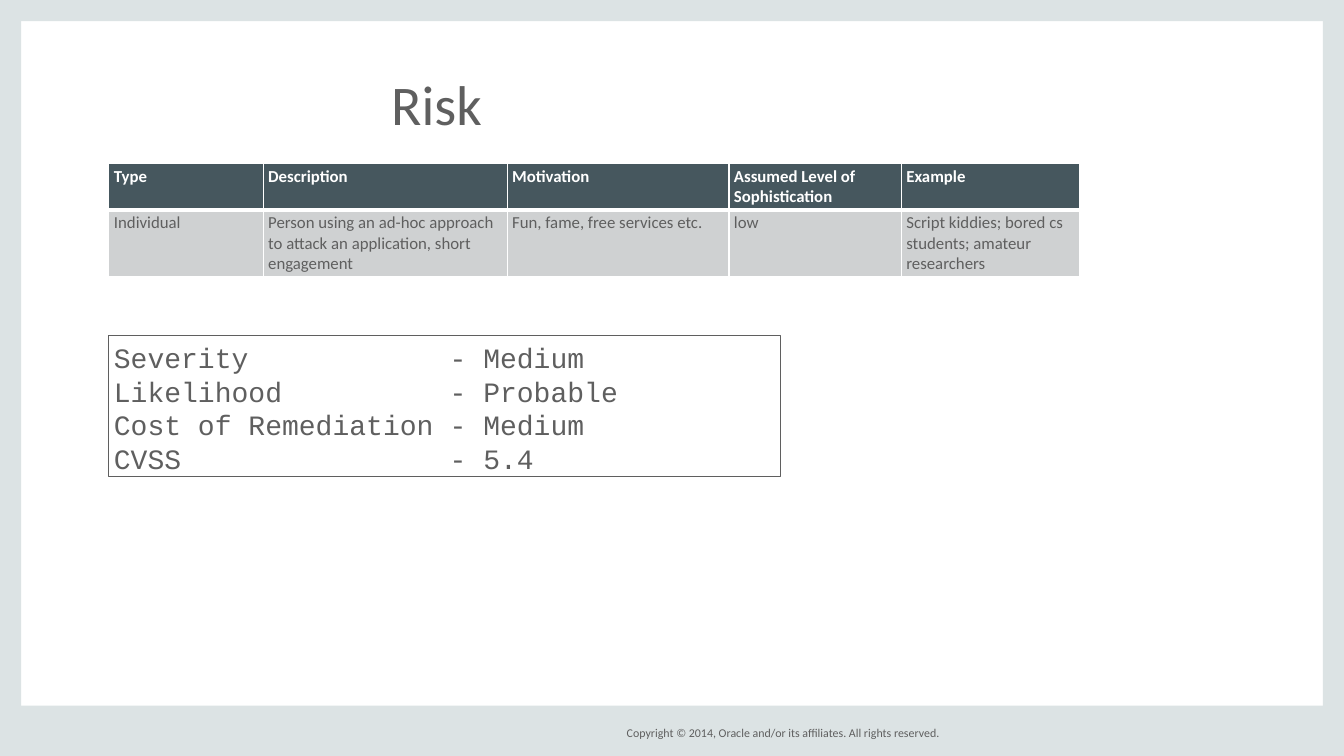
import lxml.etree
import pptx
import pptx.dml.color
import pptx.enum.shapes
import pptx.enum.text
import pptx.oxml.ns
import pptx.util

Inches, Pt = pptx.util.Inches, pptx.util.Pt
RGB = pptx.dml.color.RGBColor.from_string
ALIGN = pptx.enum.text.PP_ALIGN
ANCHOR = pptx.enum.text.MSO_ANCHOR
RECTANGLE = pptx.enum.shapes.MSO_SHAPE.RECTANGLE
qn = pptx.oxml.ns.qn

heading = "Risk"
copyright_line = "Copyright © 2014, Oracle and/or its affiliates. All rights reserved."
attackers = [
    ("Type", "Description", "Motivation", "Assumed Level of Sophistication", "Example"),
    (
        "Individual",
        "Person using an ad-hoc approach to attack an application, short engagement",
        "Fun, fame, free services etc.",
        "low",
        "Script kiddies; bored cs students; amateur researchers",
    ),
]
ratings = [
    ("Severity", "Medium"),
    ("Likelihood", "Probable"),
    ("Cost of Remediation", "Medium"),
    ("CVSS", "5.4"),
]

theme = {
    "frame": "DCE3E4",
    "header": "46575E",
    "body": "CFD1D2",
    "ink": "5F5F5F",
    "white": "FFFFFF",
    "sans": "Calibri",
    "mono": "Courier New",
    "title_size": 40,
    "rating_size": 20,
    "rating_pitch": 24,
    "table_size": 12,
    "footer_size": 8.5,
}
slide_width, slide_height = 13.33, 7.5
side, bottom = 0.21, 0.5
left_edge = 1.08
column_widths = [1.53, 2.42, 2.2, 1.71, 1.77]
row_heights = [0.45, 0.65]
dash_column = 3.33


def apply(target, values):
    for name, value in values.items():
        setattr(target, name, value)


def insets(horizontal, top, base):
    return {
        "margin_left": Inches(horizontal),
        "margin_right": Inches(horizontal),
        "margin_top": Inches(top),
        "margin_bottom": Inches(base),
    }


def style(paragraph, face, size, color, bold=False):
    apply(paragraph.font, {"name": theme[face], "size": Pt(theme[size]), "bold": bold})
    paragraph.font.color.rgb = RGB(theme[color])


def add_rectangle(slide, left, top, width, height):
    rectangle = slide.shapes.add_shape(RECTANGLE, *map(Inches, (left, top, width, height)))
    rectangle.shadow.inherit = False
    return rectangle


def add_frame(slide):
    bars = [
        (0, 0, side, slide_height),
        (slide_width - side, 0, side, slide_height),
        (0, slide_height - bottom, slide_width, bottom),
        (0, 0, slide_width, side),
    ]
    for bar in bars:
        band = add_rectangle(slide, *bar)
        band.fill.solid()
        band.fill.fore_color.rgb = RGB(theme["frame"])
        band.line.fill.background()


def add_footer(slide):
    footer = slide.shapes.add_textbox(*map(Inches, (5.88, 7.17, 3.5, 0.2))).text_frame
    apply(footer, insets(0.06, 0, 0))
    apply(footer, {"word_wrap": False, "vertical_anchor": ANCHOR.MIDDLE, "text": copyright_line})
    footer.paragraphs[0].alignment = ALIGN.RIGHT
    style(footer.paragraphs[0], "sans", "footer_size", "ink")


def add_title(slide):
    title = slide.shapes.title
    apply(title, dict(zip(("left", "top", "width", "height"), map(Inches, (3.83, 0.67, 4.62, 0.72)))))
    apply(title.text_frame, insets(0.05, 0.02, 0.02))
    apply(title.text_frame, {"word_wrap": True, "vertical_anchor": ANCHOR.TOP, "text": heading})
    title.text_frame.paragraphs[0].alignment = ALIGN.LEFT
    style(title.text_frame.paragraphs[0], "sans", "title_size", "ink")


def add_ratings(slide):
    panel = add_rectangle(slide, left_edge, 3.33, 6.66, 1.4)
    panel.fill.background()
    panel.line.color.rgb = RGB(theme["ink"])
    panel.line.width = Pt(0.75)
    frame = panel.text_frame
    apply(frame, insets(0.05, 0.05, 0.02))
    apply(frame, {"word_wrap": True, "vertical_anchor": ANCHOR.TOP})
    frame.text = "\n".join(f"{label}\t- {value}" for label, value in ratings)
    for rating in frame.paragraphs:
        properties = rating._p.get_or_add_pPr()
        tabs = lxml.etree.SubElement(properties, qn("a:tabLst"))
        lxml.etree.SubElement(tabs, qn("a:tab"), pos=str(Inches(dash_column)), algn="l")
        apply(rating, {"alignment": ALIGN.LEFT, "line_spacing": Pt(theme["rating_pitch"])})
        style(rating, "mono", "rating_size", "ink")


def add_borders(cell, widths):
    properties = cell._tc.get_or_add_tcPr()
    for edge, width in widths.items():
        border = lxml.etree.SubElement(properties, qn(f"a:ln{edge}"), w=str(Pt(width)))
        fill = lxml.etree.SubElement(border, qn("a:solidFill"))
        lxml.etree.SubElement(fill, qn("a:srgbClr"), val=theme["white"])


def add_attackers(slide):
    size = (left_edge, 1.62, sum(column_widths), sum(row_heights))
    table = slide.shapes.add_table(len(attackers), len(column_widths), *map(Inches, size)).table
    apply(table, {"first_row": False, "horz_banding": False})
    for column, width in zip(table.columns, column_widths):
        column.width = Inches(width)
    for row_index, (row, height, texts) in enumerate(zip(table.rows, row_heights, attackers)):
        row.height = Inches(height)
        is_header = row_index == 0
        widths = {"L": 1, "R": 1, "T": 1 if is_header else 3, "B": 3 if is_header else 1}
        for cell, text in zip(row.cells, texts):
            apply(cell, {"text": text, **insets(0.05, 0.03, 0.03)})
            add_borders(cell, widths)
            cell.fill.solid()
            cell.fill.fore_color.rgb = RGB(theme["header" if is_header else "body"])
            color = "white" if is_header else "ink"
            style(cell.text_frame.paragraphs[0], "sans", "table_size", color, is_header)


def main():
    presentation = pptx.Presentation()
    apply(presentation, {"slide_width": Inches(slide_width), "slide_height": Inches(slide_height)})
    slide = presentation.slides.add_slide(presentation.slide_layouts[5])
    for add_part in (add_frame, add_footer, add_title, add_ratings, add_attackers):
        add_part(slide)
    presentation.save("out.pptx")


if __name__ == "__main__":
    main()
